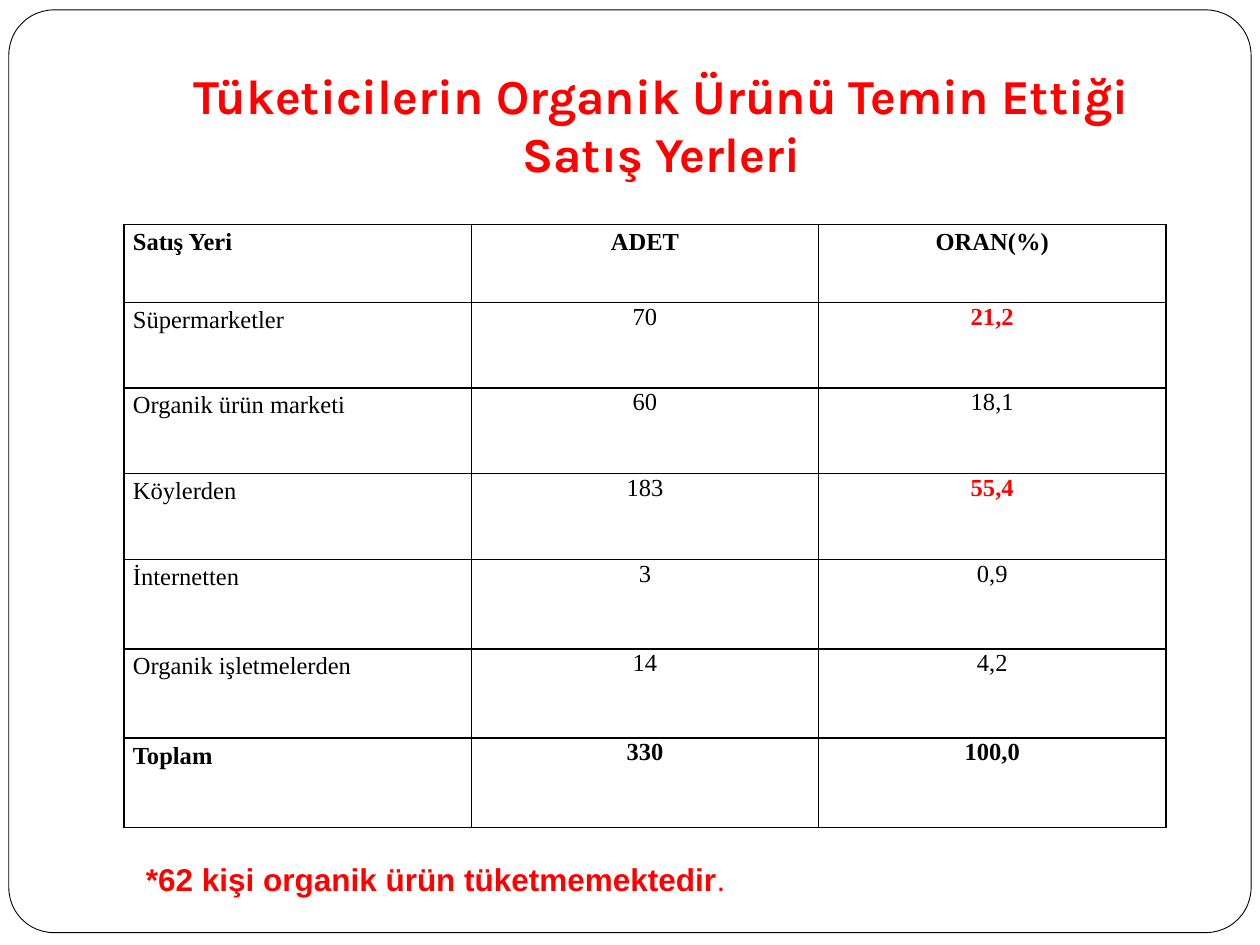
"""Build the slide on where consumers buy organic products."""
from dataclasses import dataclass
from typing import Any

from lxml.etree import SubElement
from pptx import Presentation
from pptx.dml.color import RGBColor as RGB
from pptx.enum.shapes import MSO_SHAPE as Shape
from pptx.enum.text import MSO_ANCHOR as Anchor, PP_ALIGN as Align
from pptx.oxml.ns import qn
from pptx.util import Inches, Pt


@dataclass(frozen=True)
class Theme:
    """Colours, type sizes and fonts of the slide."""
    ink: RGB = RGB(0, 0, 0)
    paper: RGB = RGB(255, 255, 255)
    accent: RGB = RGB(255, 0, 0)
    title_size: float = 27.9
    note_size: float = 18
    cell_size: float = 14
    title_font: str = "Karla"
    note_font: str = "Arial"
    cell_font: str = "Times New Roman"


@dataclass(frozen=True)
class Box:
    """A rectangle in shares of the slide's size."""
    x: float
    y: float
    w: float
    h: float

    def place(self) -> tuple[int, int, int, int]:
        """Return left, top, width and height as lengths."""
        return (int(self.x * WIDTH), int(self.y * HEIGHT),
                int(self.w * WIDTH), int(self.h * HEIGHT))


@dataclass(frozen=True)
class Outlet:
    """One table row: a place of sale with its count and share."""
    place: str
    count: str
    share: str
    height: float
    bold: bool = False
    marked: bool = False


THEME = Theme()
WIDTH, HEIGHT = Inches(10), Inches(7.5)
FRAME = Box(0.007, 0.0105, 0.986, 0.9765)
TITLE = Box(0.1, 0.04, 0.85, 0.1667)
TABLE = Box(0.0985, 0.2373, 0.8268, 0.64)
NOTE = Box(0.106, 0.904, 0.587, 0.0533)
OUTLETS = [
    Outlet("Satış Yeri", "ADET", "ORAN(%)", 0.62, bold=True),
    Outlet("Süpermarketler", "70", "21,2", 0.68, marked=True),
    Outlet("Organik ürün marketi", "60", "18,1", 0.68),
    Outlet("Köylerden", "183", "55,4", 0.68, marked=True),
    Outlet("İnternetten", "3", "0,9", 0.71),
    Outlet("Organik işletmelerden", "14", "4,2", 0.71),
    Outlet("Toplam", "330", "100,0", 0.71, bold=True),
]


def apply(obj: Any, **values: Any) -> None:
    """Set each given attribute on an object."""
    for name, value in values.items():
        setattr(obj, name, value)


def add_run(p: Any, text: str, font: str, size: float, color: RGB, bold: bool) -> None:
    """Append a formatted run to a paragraph."""
    r = p.add_run()
    r.text = text
    apply(r.font, name=font, size=Pt(size), bold=bold)
    r.font.color.rgb = color


def add_frame(s: Any) -> None:
    """Draw the rounded border of the slide."""
    sp = s.shapes.add_shape(Shape.ROUNDED_RECTANGLE, *FRAME.place())
    sp.adjustments[0] = 0.049
    sp.shadow.inherit = False
    sp.fill.solid()
    sp.fill.fore_color.rgb = THEME.paper
    sp.line.color.rgb = THEME.ink
    sp.line.width = Pt(0.5)


def add_text(s: Any, box: Box, **frame: Any) -> Any:
    """Add a wrapping text box and return its first paragraph."""
    tf = s.shapes.add_textbox(*box.place()).text_frame
    apply(tf, word_wrap=True, **frame)
    return tf.paragraphs[0]


def add_borders(cell: Any) -> None:
    """Rule all four sides of a cell."""
    tc_pr = cell._tc.get_or_add_tcPr()
    for i, side in enumerate("LRTB"):
        ln = SubElement(tc_pr, qn(f"a:ln{side}"), w=str(Pt(1)))
        fill = SubElement(ln, qn("a:solidFill"))
        SubElement(fill, qn("a:srgbClr"), val=str(THEME.ink))
        tc_pr.insert(i, ln)


def fill_cell(cell: Any, text: str, align: Any, spacing: Any, color: RGB, bold: bool) -> None:
    """Write and format one table cell."""
    cell.fill.background()
    apply(cell, margin_left=Inches(0.07), margin_right=Inches(0.07),
          margin_top=0, margin_bottom=0)
    p = cell.text_frame.paragraphs[0]
    apply(p, alignment=align, line_spacing=spacing)
    add_run(p, text, THEME.cell_font, THEME.cell_size, color, bold)
    add_borders(cell)


def add_outlets(s: Any) -> None:
    """Add the table of sale places."""
    table = s.shapes.add_table(len(OUTLETS), 3, *TABLE.place()).table
    apply(table, first_row=False, horz_banding=False)
    for i, outlet in enumerate(OUTLETS):
        table.rows[i].height = Inches(outlet.height)
        for j, text in enumerate((outlet.place, outlet.count, outlet.share)):
            marked = outlet.marked and j == 2
            fill_cell(table.cell(i, j), text,
                      Align.CENTER if j else Align.LEFT,
                      Pt(16) if i and j else 1.15,
                      THEME.accent if marked else THEME.ink,
                      outlet.bold or marked)


def main() -> None:
    """Build and save the presentation."""
    prs = Presentation()
    apply(prs, slide_width=WIDTH, slide_height=HEIGHT)
    s = prs.slides.add_slide(prs.slide_layouts[6])
    add_frame(s)
    p = add_text(s, TITLE, vertical_anchor=Anchor.BOTTOM, margin_bottom=Inches(0.1))
    p.alignment = Align.CENTER
    add_run(p, "Tüketicilerin Organik Ürünü Temin Ettiği Satış Yerleri",
            THEME.title_font, THEME.title_size, THEME.accent, True)
    add_outlets(s)
    p = add_text(s, NOTE)
    for text, bold in (("*62 kişi organik ürün tüketmemektedir", True), (".", False)):
        add_run(p, text, THEME.note_font, THEME.note_size, THEME.accent, bold)
    prs.save("out.pptx")


if __name__ == "__main__":
    main()
